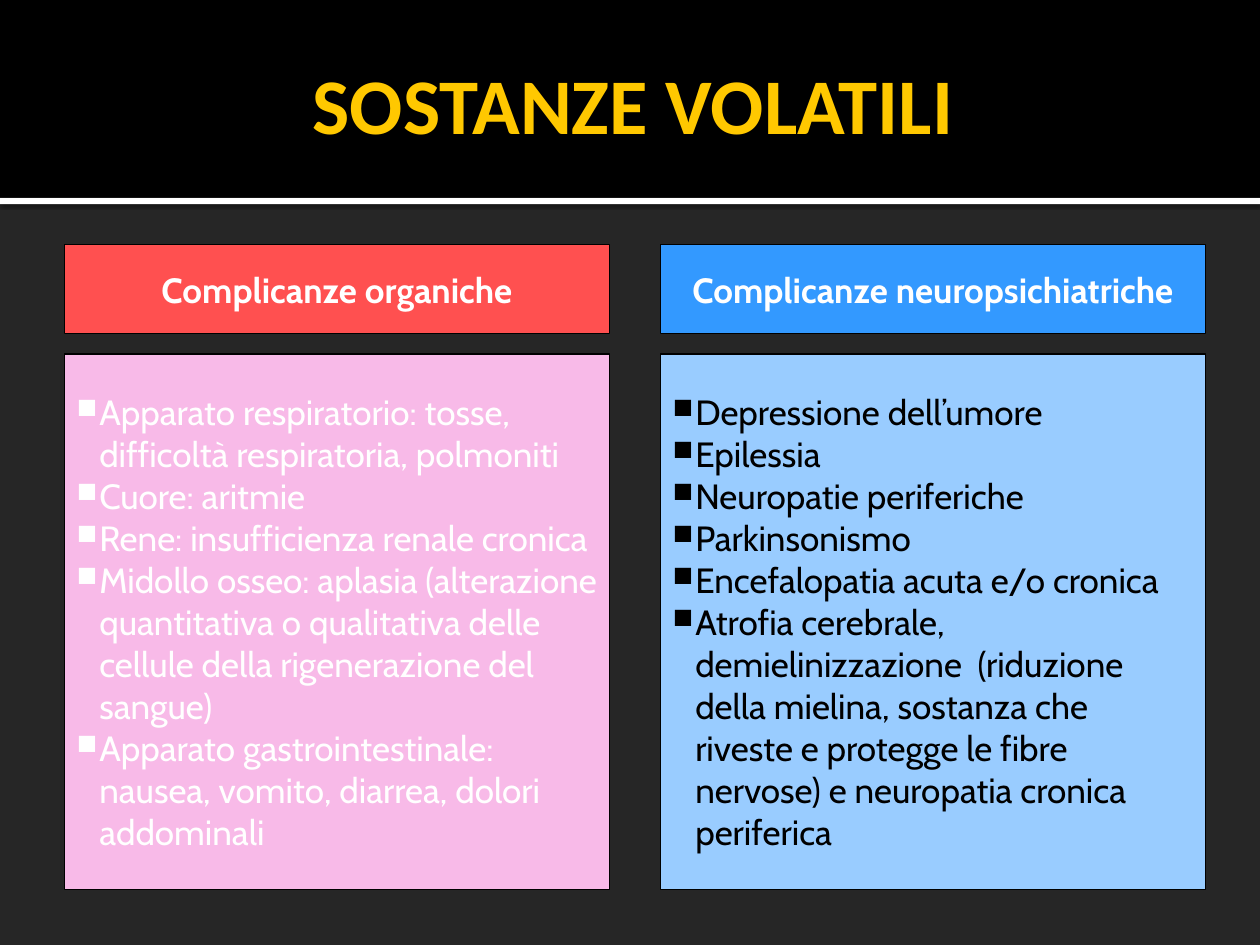
from lxml import etree
from pptx import Presentation
from pptx.dml.color import RGBColor
from pptx.enum.shapes import MSO_SHAPE
from pptx.enum.text import MSO_ANCHOR, PP_ALIGN
from pptx.oxml.ns import qn
from pptx.util import Inches, Pt

RECTANGLE = MSO_SHAPE.RECTANGLE
MIDDLE = MSO_ANCHOR.MIDDLE
CENTER, LEFT = PP_ALIGN.CENTER, PP_ALIGN.LEFT

BLACK = RGBColor(0x00, 0x00, 0x00)
WHITE = RGBColor(0xFF, 0xFF, 0xFF)
CHARCOAL = RGBColor(0x26, 0x26, 0x26)
GOLD = RGBColor(0xFF, 0xC8, 0x00)
RED = RGBColor(0xFF, 0x50, 0x50)
PINK = RGBColor(0xF8, 0xBA, 0xE8)
BLUE = RGBColor(0x33, 0x99, 0xFF)
SKY = RGBColor(0x99, 0xCC, 0xFF)

COLUMN_LEFT, COLUMN_STEP, COLUMN_WIDTH = 0.51, 4.73, 4.33

COLUMNS = [
    ("Complicanze organiche", RED, PINK, WHITE, [
        "Apparato respiratorio: tosse, difficoltà respiratoria, polmoniti",
        "Cuore: aritmie",
        "Rene: insufficienza renale cronica",
        "Midollo osseo: aplasia (alterazione quantitativa o qualitativa "
        "delle cellule della rigenerazione del sangue)",
        "Apparato gastrointestinale: nausea, vomito, diarrea, dolori addominali",
    ]),
    ("Complicanze neuropsichiatriche", BLUE, SKY, BLACK, [
        "Depressione dell’umore",
        "Epilessia",
        "Neuropatie periferiche",
        "Parkinsonismo",
        "Encefalopatia acuta e/o cronica",
        "Atrofia cerebrale, demielinizzazione  (riduzione della mielina, "
        "sostanza che riveste e protegge le fibre nervose) e neuropatia "
        "cronica periferica",
    ]),
]


class SlideBuilder:
    body_font = "Cabin"
    title_font = "Calibri"
    body_size = 20
    title_size = 45
    indent = 0.18

    def __init__(self, slide):
        self.slide = slide

    def background(self, color):
        fill = self.slide.background.fill
        fill.solid()
        fill.fore_color.rgb = color

    def rectangle(self, left, top, width, height, color, outlined=False):
        box = self.slide.shapes.add_shape(
            RECTANGLE, Inches(left), Inches(top), Inches(width), Inches(height))
        box.shadow.inherit = False
        box.fill.solid()
        box.fill.fore_color.rgb = color
        if outlined:
            box.line.color.rgb = BLACK
            box.line.width = Pt(0.75)
        else:
            box.line.fill.background()
        return box

    def soft_shadow(self, box):
        effects = box._element.spPr.find(qn("a:effectLst"))
        shadow = etree.SubElement(
            effects, qn("a:outerShdw"), blurRad=str(Pt(2.5)),
            dist=str(Pt(0.8)), dir="5400000", rotWithShape="0")
        color = etree.SubElement(shadow, qn("a:srgbClr"), val=str(BLACK))
        etree.SubElement(color, qn("a:alpha"), val="60000")

    def add_text(self, box, lines, color, font, size, bold=False,
                 align=CENTER, wrap=True):
        frame = box.text_frame
        frame.word_wrap = wrap
        frame.vertical_anchor = MIDDLE
        for index, line in enumerate(lines):
            para = frame.add_paragraph() if index else frame.paragraphs[0]
            para.alignment = align
            span = para.add_run()
            span.text = line
            span.font.name = font
            span.font.size = Pt(size)
            span.font.bold = bold
            span.font.color.rgb = color

    def title(self, text):
        box = self.slide.shapes.add_textbox(
            Inches(0.5), Inches(0.13), Inches(9), Inches(1.37))
        self.add_text(box, [text], GOLD, self.title_font, self.title_size, bold=True)
        box.text_frame.margin_right = Inches(0.05)

    def heading(self, left, text, color, wrap):
        box = self.rectangle(left, 1.94, COLUMN_WIDTH, 0.71, color, outlined=True)
        self.add_text(box, [text], WHITE, self.body_font, self.body_size,
                      bold=True, wrap=wrap)

    def bullet_panel(self, left, items, fill, color):
        box = self.rectangle(left, 2.81, COLUMN_WIDTH, 4.25, fill, outlined=True)
        self.add_text(box, items, color, self.body_font, self.body_size, align=LEFT)
        for para in box.text_frame.paragraphs:
            properties = para._p.get_or_add_pPr()
            properties.set("marL", str(Inches(self.indent)))
            properties.set("indent", str(-Inches(self.indent)))
            bullet_color = etree.SubElement(properties, qn("a:buClr"))
            etree.SubElement(bullet_color, qn("a:srgbClr"), val=str(color))
            etree.SubElement(properties, qn("a:buSzPct"), val="80000")
            etree.SubElement(properties, qn("a:buChar"), char="■")


def main():
    deck = Presentation()
    deck.slide_width = Inches(10)
    deck.slide_height = Inches(7.5)
    page = SlideBuilder(deck.slides.add_slide(deck.slide_layouts[6]))

    page.background(CHARCOAL)
    rule = page.rectangle(0, 1.57, 10, 0.05, WHITE)
    page.soft_shadow(rule)
    page.rectangle(0, 0, 10, 1.57, BLACK)
    page.title("SOSTANZE VOLATILI")

    for index, (name, accent, tint, ink, items) in enumerate(COLUMNS):
        left = COLUMN_LEFT + index * COLUMN_STEP
        page.heading(left, name, accent, wrap=index > 0)
        page.bullet_panel(left, items, tint, ink)

    deck.save("out.pptx")


if __name__ == "__main__":
    main()
